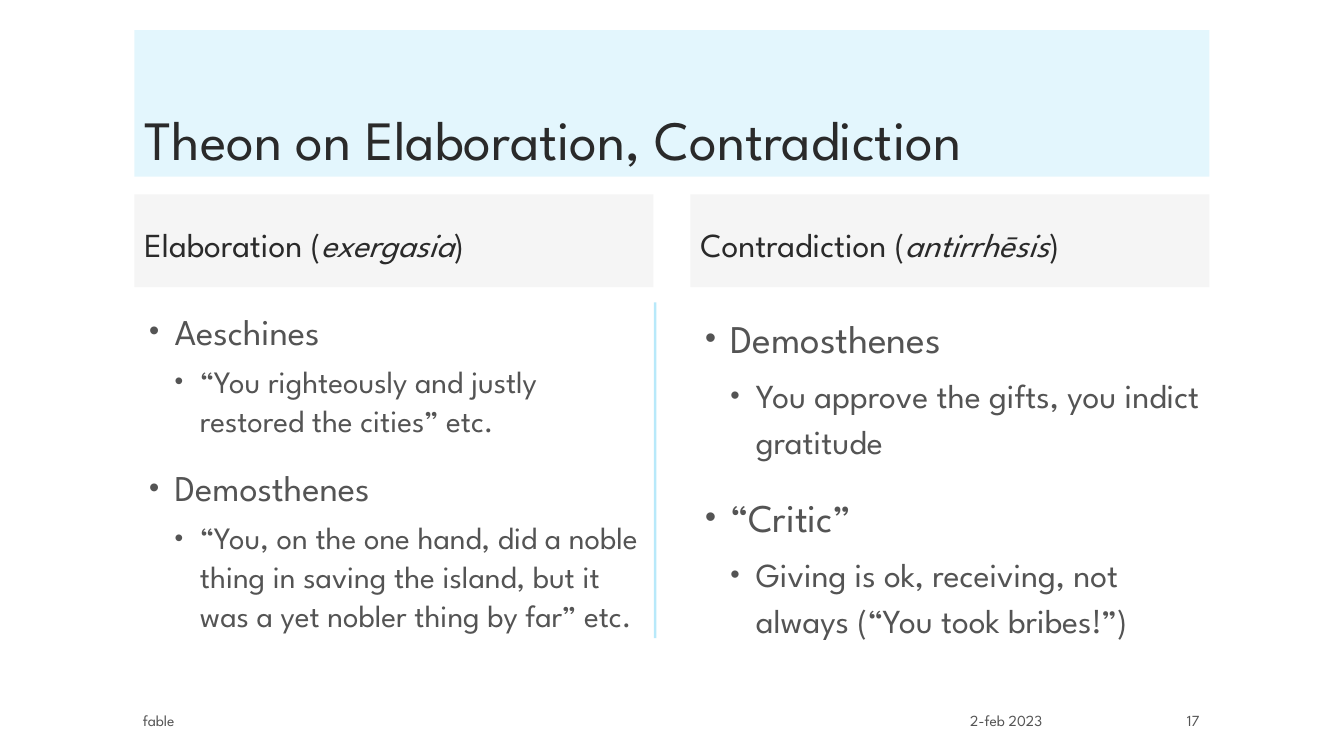
from lxml.etree import SubElement
from pptx import Presentation
from pptx.dml.color import RGBColor
from pptx.enum.shapes import MSO_CONNECTOR as Connector
from pptx.enum.text import MSO_ANCHOR as Anchor, PP_ALIGN as Align
from pptx.oxml.ns import qn
from pptx.util import Cm, Pt

FONT = "League Spartan"
SKY = RGBColor(0x00, 0xB0, 0xF0)
SILVER = RGBColor(0xBF, 0xBF, 0xBF)
INK = RGBColor(0x2A, 0x2A, 0x2A)
GREY = RGBColor(0x54, 0x54, 0x54)

LEFT, COLUMN_WIDTH = 3.39, 13.08


def add_box(left, top, width, height, anchor, tint=None, opacity=100):
    box = slide.shapes.add_textbox(Cm(left), Cm(top), Cm(width), Cm(height))
    box.text_frame.word_wrap = True
    box.text_frame.vertical_anchor = anchor
    if tint is not None:
        box.fill.solid()
        box.fill.fore_color.rgb = tint
        color = box.fill._xPr.find(".//" + qn("a:srgbClr"))
        SubElement(color, qn("a:alpha"), val=str(opacity * 1000))
    return box.text_frame


def add_run(paragraph, text, size, color, italic=False):
    run = paragraph.add_run()
    run.text = text
    run.font.name = FONT
    run.font.size = Pt(size)
    run.font.color.rgb = color
    run.font.italic = italic


deck = Presentation()
deck.slide_width, deck.slide_height = Cm(33.87), Cm(19.05)
slide = deck.slides.add_slide(deck.slide_layouts[6])

# Divider between the columns
divider = slide.shapes.add_connector(
    Connector.STRAIGHT, Cm(16.51), Cm(7.62), Cm(16.51), Cm(16.08))
divider.line.width = Pt(1.75)
divider.line.color.rgb = SKY
divider_color = divider.line._ln.find(".//" + qn("a:srgbClr"))
SubElement(divider_color, qn("a:alpha"), val="28000")
SubElement(divider._element.spPr, qn("a:effectLst"))

# Title
title = add_box(LEFT, 0.76, 27.09, 3.69, Anchor.BOTTOM, SKY, 11).paragraphs[0]
title.line_spacing = 1.14
add_run(title, "Theon on Elaboration, Contradiction", 39.6, INK)

# Columns: left, heading, Greek term, line spacing, sizes by level, points
columns = [
    (LEFT, "Elaboration", "exergasia", 1.04, (25.9, 22.2), [
        (0, "Aeschines"),
        (1, "“You righteously and justly restored the cities” etc."),
        (0, "Demosthenes"),
        (1, "“You, on the one hand, did a noble thing in saving the island, "
            "but it was a yet nobler thing by far” etc."),
    ]),
    (17.4, "Contradiction", "antirrhēsis", 1.14, (28, 24), [
        (0, "Demosthenes"),
        (1, "You approve the gifts, you indict gratitude"),
        (0, "“Critic”"),
        (1, "Giving is ok, receiving, not always (“You took bribes!”)"),
    ]),
]
for left, heading, term, spacing, sizes, points in columns:
    header = add_box(left, 4.9, COLUMN_WIDTH, 2.34, Anchor.MIDDLE,
                     SILVER, 15).paragraphs[0]
    header.line_spacing = 1.14
    add_run(header, f"{heading} (", 24, INK)
    add_run(header, term, 24, INK, italic=True)
    add_run(header, ")", 24, INK)

    body = add_box(left, 7.62, COLUMN_WIDTH, 9.53, Anchor.TOP)
    for index, (level, text) in enumerate(points):
        point = body.add_paragraph() if index else body.paragraphs[0]
        point.level = level
        point.line_spacing = spacing
        point.space_before = Pt((18, 6)[level])
        add_run(point, text, sizes[level], GREY)

        # Bullet and hanging indent
        props = point._p.get_or_add_pPr()
        props.set("marL", str(Cm((0.76, 1.4)[level])))
        props.set("indent", str(Cm(-0.64)))
        bullet_color = SubElement(props, qn("a:buClr"))
        SubElement(bullet_color, qn("a:srgbClr"), val=str(GREY))
        SubElement(props, qn("a:buSzPct"), val="80000")
        SubElement(props, qn("a:buFont"), typeface="Arial")
        SubElement(props, qn("a:buChar"), char="•")

# Footer
for left, width, align, text in [
    (3.35, 18.44, Align.LEFT, "fable"),
    (22.63, 3.89, Align.RIGHT, "2-feb 2023"),
    (27.31, 3.17, Align.RIGHT, "17"),
]:
    footer = add_box(left, 17.91, width, 0.51, Anchor.MIDDLE).paragraphs[0]
    footer.alignment = align
    add_run(footer, text, 11, GREY)

deck.save("out.pptx")
